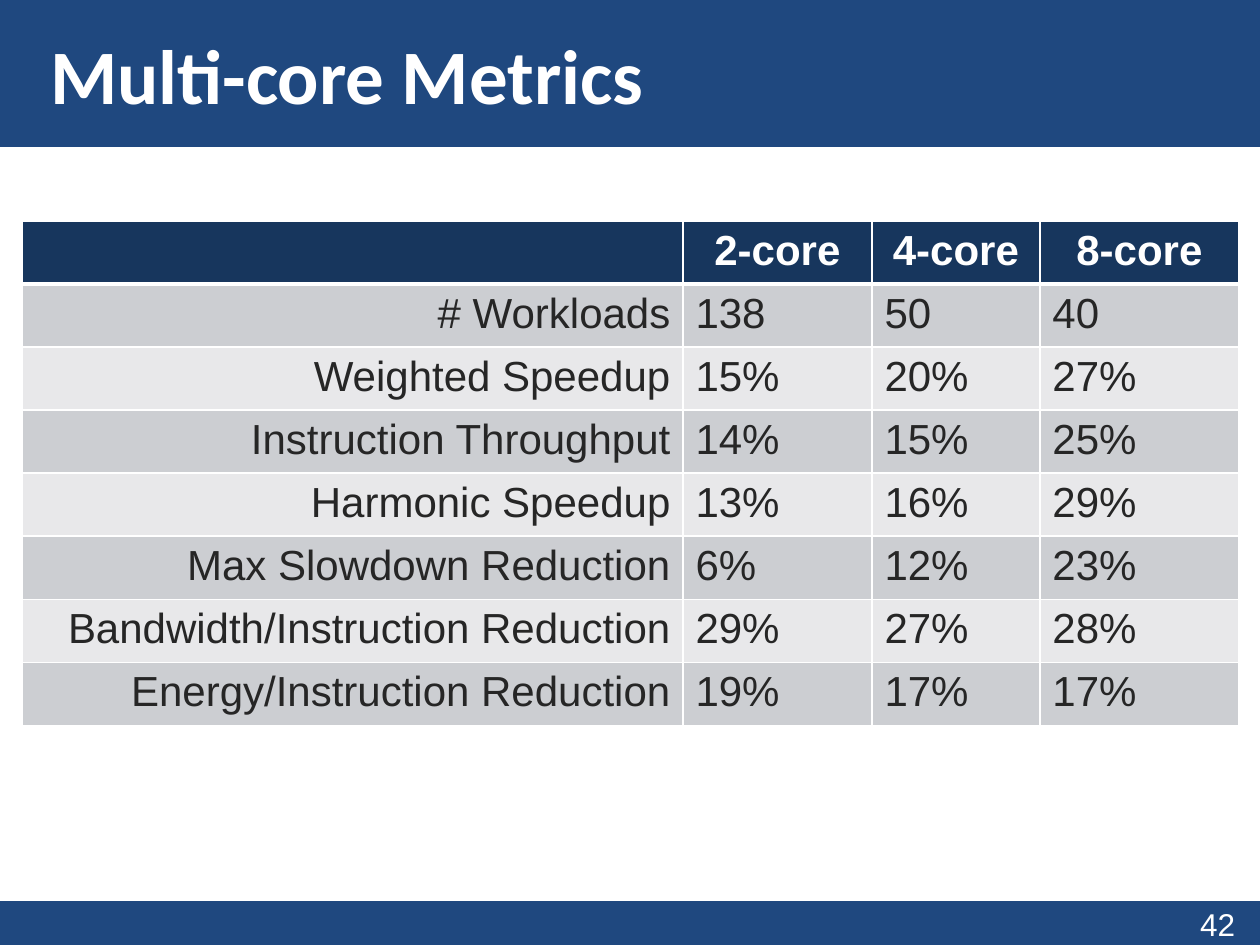
import pptx
import pptx.dml.color
import pptx.enum.shapes
import pptx.enum.text
import pptx.oxml
import pptx.oxml.ns
import pptx.util

RGBColor = pptx.dml.color.RGBColor
ALIGN = pptx.enum.text.PP_ALIGN
ANCHOR = pptx.enum.text.MSO_ANCHOR

EMU_PER_PX = 914400 / 126
WHITE = RGBColor(0xFF, 0xFF, 0xFF)
BAND_BLUE = RGBColor(0x1F, 0x48, 0x7F)
HEADER_NAVY = RGBColor(0x17, 0x36, 0x5D)
DARK_GREY = RGBColor(0x26, 0x26, 0x26)
ROW_FILLS = (RGBColor(0xCC, 0xCE, 0xD2), RGBColor(0xE8, 0xE8, 0xEA))

COLUMN_WIDTHS = (661, 189, 168, 199)
ROW_HEIGHT = 59
METRICS = (
    ("", "2-core", "4-core", "8-core"),
    ("# Workloads", "138", "50", "40"),
    ("Weighted Speedup", "15%", "20%", "27%"),
    ("Instruction Throughput", "14%", "15%", "25%"),
    ("Harmonic Speedup", "13%", "16%", "29%"),
    ("Max Slowdown Reduction", "6%", "12%", "23%"),
    ("Bandwidth/Instruction Reduction", "29%", "27%", "28%"),
    ("Energy/Instruction Reduction", "19%", "17%", "17%"),
)


def px(length):
    return pptx.util.Emu(round(length * EMU_PER_PX))


def place(shape, left, top, width, height):
    shape.left, shape.top = px(left), px(top)
    shape.width, shape.height = px(width), px(height)


def write(text_frame, text, size, color, font="Arial", bold=False, align=ALIGN.LEFT):
    paragraph = text_frame.paragraphs[0]
    paragraph.alignment = align
    run = paragraph.add_run()
    run.text = text
    run.font.name = font
    run.font.size = pptx.util.Pt(size)
    run.font.bold = bold
    run.font.color.rgb = color


def paint(target, color):
    target.fill.solid()
    target.fill.fore_color.rgb = color


def add_footer(slide, number):
    band = slide.shapes.add_shape(
        pptx.enum.shapes.MSO_SHAPE.RECTANGLE, px(0), px(903), px(1260), px(42)
    )
    band.shadow.inherit = False
    paint(band, BAND_BLUE)
    band.line.color.rgb = BAND_BLUE
    band.line.width = pptx.util.Pt(2)

    box = slide.shapes.add_textbox(px(966), px(899), px(294), px(42))
    box.text_frame.word_wrap = True
    box.text_frame.margin_right = px(25)
    write(box.text_frame, number, 18, WHITE, align=ALIGN.RIGHT)


def set_title(slide, text):
    title = slide.shapes.title
    place(title, 0, 0, 1260, 147)
    paint(title, BAND_BLUE)
    frame = title.text_frame
    frame.margin_left = px(50)
    frame.vertical_anchor = ANCHOR.MIDDLE
    write(frame, text, 44, WHITE, font="Calibri", bold=True)


def set_borders(cell, bottom_width):
    properties = cell._tc.get_or_add_tcPr()
    for side, width in (("L", 1), ("R", 1), ("T", 1), ("B", bottom_width)):
        properties.append(pptx.oxml.parse_xml(
            f'<a:ln{side} {pptx.oxml.ns.nsdecls("a")} w="{pptx.util.Pt(width)}">'
            f'<a:solidFill><a:srgbClr val="{WHITE}"/></a:solidFill></a:ln{side}>'
        ))


def fill_cell(cell, text, row, column):
    header = row == 0
    set_borders(cell, 3 if header else 1)
    paint(cell, HEADER_NAVY if header else ROW_FILLS[(row - 1) % 2])
    if not text:
        return
    if header:
        align = ALIGN.CENTER
    else:
        align = ALIGN.RIGHT if column == 0 else ALIGN.LEFT
    color = WHITE if header else DARK_GREY
    write(cell.text_frame, text, 24, color, bold=header, align=align)


def add_metrics_table(slide):
    table = slide.shapes.add_table(
        len(METRICS), len(COLUMN_WIDTHS), px(22), px(221),
        px(sum(COLUMN_WIDTHS)), px(ROW_HEIGHT * len(METRICS)),
    ).table
    for column, width in zip(table.columns, COLUMN_WIDTHS):
        column.width = px(width)
    for row, values in enumerate(METRICS):
        table.rows[row].height = px(ROW_HEIGHT)
        for column, text in enumerate(values):
            fill_cell(table.cell(row, column), text, row, column)


def main():
    presentation = pptx.Presentation()
    presentation.slide_width = px(1260)
    presentation.slide_height = px(945)
    slide = presentation.slides.add_slide(presentation.slide_layouts[5])
    add_footer(slide, "42")
    set_title(slide, "Multi-core Metrics")
    add_metrics_table(slide)
    presentation.save("out.pptx")


if __name__ == "__main__":
    main()
